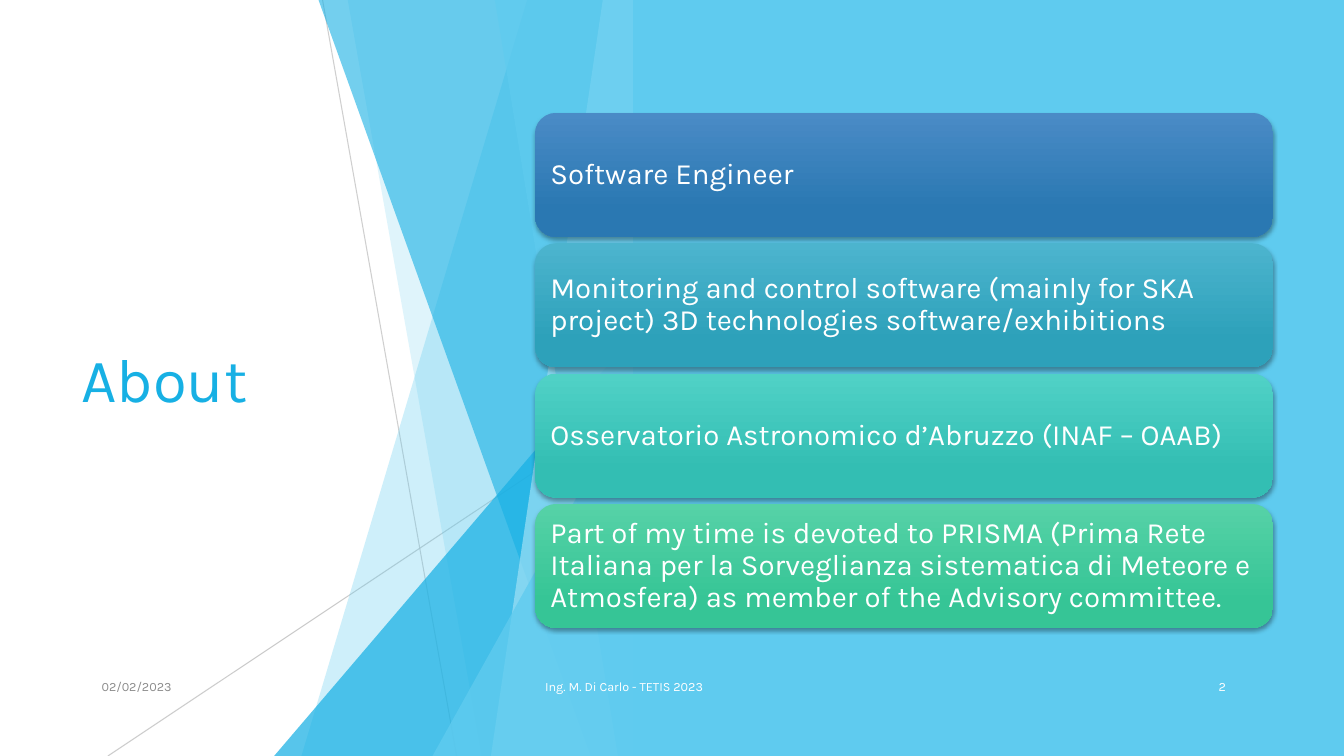
import dataclasses

import pptx
import pptx.dml.color
import pptx.enum.shapes
import pptx.enum.text
import pptx.oxml.ns
import pptx.util

SHAPE = pptx.enum.shapes.MSO_SHAPE
ALIGN = pptx.enum.text.PP_ALIGN
qn = pptx.oxml.ns.qn

COLUMNS, ROWS = 160, 90
PANEL_LEFT = 75.36
CARD_LEFT = 63.72


@dataclasses.dataclass(frozen=True)
class Theme:
    font: str = "Karla"
    title_size: int = 44
    card_size: int = 21
    footer_size: int = 9
    white: str = "FFFFFF"
    black: str = "000000"
    grey: str = "8C8C8C"
    rule: str = "BFBFBF"
    sky: str = "5FCBEF"
    pale: str = "9FE0F5"
    blue: str = "17B0E4"
    cards: tuple = (
        ("4A8BC6", "2A78B2"),
        ("4CB4CE", "2DA1BA"),
        ("50D1C6", "33BEB3"),
        ("56D2A7", "36C596"),
    )


class Deck:
    def __init__(self, theme):
        self.theme = theme
        self.prs = pptx.Presentation()
        self.prs.slide_width = pptx.util.Inches(40 / 3)
        self.prs.slide_height = pptx.util.Inches(7.5)
        self.s = self.prs.slides.add_slide(self.prs.slide_layouts[6])
        self.s.background.fill.solid()
        self.s.background.fill.fore_color.rgb = self.rgb(theme.white)

    def rgb(self, color):
        return pptx.dml.color.RGBColor.from_string(color)

    def grid(self, *lengths):
        sides = (self.prs.slide_width / COLUMNS, self.prs.slide_height / ROWS)
        return [round(v * sides[i % 2]) for i, v in enumerate(lengths)]

    def add_node(self, parent, tag, **attributes):
        node = parent.makeelement(qn(tag), attributes)
        parent.append(node)
        return node

    def fade(self, sp, alpha):
        color = sp.element.spPr.find(".//" + qn("a:srgbClr"))
        self.add_node(color, "a:alpha", val=str(alpha * 1000))

    def paint(self, sp, color, alpha=100):
        sp.fill.solid()
        sp.fill.fore_color.rgb = self.rgb(color)
        if alpha < 100:
            self.fade(sp, alpha)
        sp.line.fill.background()
        sp.shadow.inherit = False

    def line(self, start, end, alpha):
        sp = self.s.shapes.add_connector(
            pptx.enum.shapes.MSO_CONNECTOR.STRAIGHT, *self.grid(*start, *end)
        )
        sp.line.color.rgb = self.rgb(self.theme.rule)
        sp.line.width = pptx.util.Pt(0.75)
        self.fade(sp, alpha)
        self.add_node(sp.element.spPr, "a:effectLst")

    def wedge(self, top, bottom, color, alpha):
        corners = [(PANEL_LEFT, 0), (PANEL_LEFT, ROWS), (bottom, ROWS)]
        builder = self.s.shapes.build_freeform(*self.grid(top, 0))
        builder.add_line_segments([self.grid(*c) for c in corners], close=True)
        self.paint(builder.convert_to_shape(), color, alpha)

    def triangle(self, left, top, color, alpha):
        box = self.grid(left, top, PANEL_LEFT - left, ROWS - top)
        sp = self.s.shapes.add_shape(SHAPE.ISOSCELES_TRIANGLE, *box)
        sp.adjustments[0] = 1
        self.paint(sp, color, alpha)

    def panel(self):
        box = self.grid(PANEL_LEFT, 0, COLUMNS - PANEL_LEFT, ROWS)
        self.paint(self.s.shapes.add_shape(SHAPE.RECTANGLE, *box), self.theme.sky)

    def fill_text(self, sp, text, size, color, align=ALIGN.LEFT):
        tf = sp.text_frame
        tf.word_wrap = True
        tf.vertical_anchor = pptx.enum.text.MSO_ANCHOR.MIDDLE
        p = tf.paragraphs[0]
        p.alignment = align
        r = p.add_run()
        r.text = text
        r.font.name = self.theme.font
        r.font.size = pptx.util.Pt(size)
        r.font.color.rgb = self.rgb(color)
        return p

    def text(self, box, text, size, color, align=ALIGN.LEFT):
        sp = self.s.shapes.add_textbox(*self.grid(*box))
        return self.fill_text(sp, text, size, color, align)

    def footer(self, left, width, text, color, align=ALIGN.LEFT):
        box = (left, 79.32, width, 4.8)
        p = self.text(box, text, self.theme.footer_size, color, align)
        p.space_after = pptx.util.Pt(6)

    def card(self, top, text, colors):
        box = self.grid(CARD_LEFT, top, 87.84, 14.76)
        sp = self.s.shapes.add_shape(SHAPE.ROUNDED_RECTANGLE, *box)
        sp.fill.gradient()
        sp.fill.gradient_angle = 270
        for stop, color, position in zip(sp.fill.gradient_stops, colors, (0, 0.78)):
            stop.color.rgb = self.rgb(color)
            stop.position = position
        sp.line.fill.background()
        sp.shadow.inherit = False
        shadow = self.add_node(
            sp.element.spPr.find(qn("a:effectLst")), "a:outerShdw",
            blurRad="38100", dist="25400", dir="5400000", rotWithShape="0",
        )
        shade = self.add_node(shadow, "a:srgbClr", val=self.theme.black)
        self.add_node(shade, "a:alpha", val="35000")
        tf = sp.text_frame
        inset = pptx.util.Inches(0.09)
        tf.margin_left = tf.margin_right = tf.margin_top = tf.margin_bottom = inset
        p = self.fill_text(sp, text, self.theme.card_size, self.theme.white)
        p.line_spacing = 0.9


def main():
    t = Theme()
    deck = Deck(t)
    deck.footer(9.6, 12, "02/02/2023", t.grey, ALIGN.RIGHT)

    deck.line((38.4, 0), (54.36, ROWS), 75)
    deck.line((PANEL_LEFT, 48.36), (12.84, ROWS), 80)
    deck.wedge(62.76, 35.88, t.sky, 30)
    deck.wedge(41.4, 57.36, t.sky, 20)
    deck.triangle(32.64, 39.96, t.blue, 72)
    deck.wedge(37.92, 70.32, t.blue, 60)
    deck.wedge(71.76, 58.44, t.pale, 70)
    deck.wedge(58.92, 73.56, t.sky, 65)
    deck.triangle(51.48, 47.16, t.sky, 80)

    deck.text((8.52, 18.12, 46.56, 53.76), "About", t.title_size, t.blue)
    deck.panel()
    deck.footer(CARD_LEFT, 72.84, "Ing. M. Di Carlo - TETIS 2023", t.white)
    deck.footer(138.12, 9, "2", t.white, ALIGN.RIGHT)

    topics = (
        "Software Engineer",
        "Monitoring and control software (mainly for SKA project) "
        "3D technologies software/exhibitions",
        "Osservatorio Astronomico d’Abruzzo (INAF – OAAB)",
        "Part of my time is devoted to PRISMA (Prima Rete Italiana per la "
        "Sorveglianza sistematica di Meteore e Atmosfera) as member of the "
        "Advisory committee.",
    )
    for i, (topic, colors) in enumerate(zip(topics, t.cards)):
        deck.card(13.44 + 15.52 * i, topic, colors)

    deck.prs.save("out.pptx")


if __name__ == "__main__":
    main()
